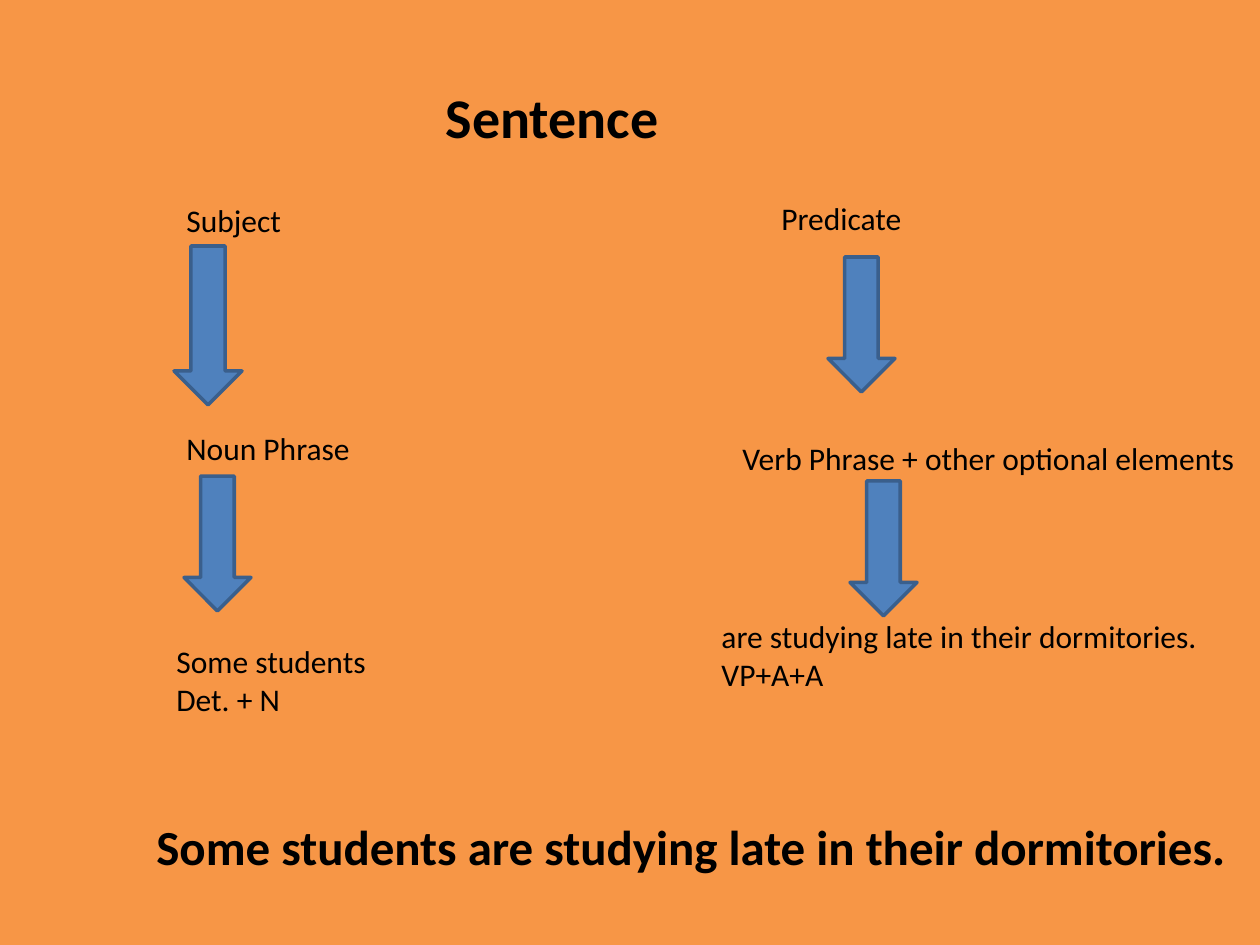
"""Build a slide that splits a sentence into subject and predicate."""
from pptx import Presentation
from pptx.dml.color import RGBColor
from pptx.enum.shapes import MSO_SHAPE
from pptx.enum.text import MSO_ANCHOR, MSO_AUTO_SIZE, PP_ALIGN
from pptx.util import Pt

COLORS = {"background": "F79646", "arrow": "4F81BD", "outline": "3A5F8C", "text": "000000"}
FONT = "Calibri"
EMU_PER_PX = 914400 / 126


def px(length):
    return round(length * EMU_PER_PX)


def color(name):
    return RGBColor.from_string(COLORS[name])


class SentenceSlide:
    def __init__(self, presentation):
        self.slide = presentation.slides.add_slide(presentation.slide_layouts[5])
        fill = self.slide.background.fill
        fill.solid()
        fill.fore_color.rgb = color("background")

    def set_text(self, box, lines, size, bold, wrap=True):
        frame = box.text_frame
        frame.text = "\n".join(lines)
        frame.word_wrap = wrap
        frame.auto_size = MSO_AUTO_SIZE.SHAPE_TO_FIT_TEXT
        frame.vertical_anchor = MSO_ANCHOR.TOP
        for paragraph in frame.paragraphs:
            paragraph.alignment = PP_ALIGN.LEFT
            paragraph.font.name = FONT
            paragraph.font.size = Pt(size)
            paragraph.font.bold = bold
            paragraph.font.color.rgb = color("text")

    def title(self, left, top, width, height, text):
        heading = self.slide.shapes.title
        heading.left, heading.top = px(left), px(top)
        heading.width, heading.height = px(width), px(height)
        self.set_text(heading, [text], 32, True)

    def label(self, left, top, width, height, *lines, size=18, bold=False, wrap=True):
        box = self.slide.shapes.add_textbox(px(left), px(top), px(width), px(height))
        self.set_text(box, lines, size, bold, wrap)

    def arrow(self, left, top, width=67, height=135):
        arrow = self.slide.shapes.add_shape(
            MSO_SHAPE.DOWN_ARROW, px(left), px(top), px(width), px(height))
        arrow.shadow.inherit = False
        arrow.fill.solid()
        arrow.fill.fore_color.rgb = color("arrow")
        arrow.line.color.rgb = color("outline")
        arrow.line.width = Pt(2)


def main():
    presentation = Presentation()
    presentation.slide_width, presentation.slide_height = px(1260), px(945)
    page = SentenceSlide(presentation)
    page.title(433, 76, 296, 81, "Sentence")

    page.arrow(174, 246, 68, 159)
    page.label(174, 195, 260, 50, "Subject")
    page.label(174, 423, 260, 50, "Noun Phrase")
    page.arrow(184, 476)
    page.label(164, 636, 377, 89, "Some students", "Det. + N")

    page.label(769, 193, 387, 50, "Predicate")
    page.arrow(828, 257)
    page.label(730, 433, 656, 50, "Verb Phrase + other optional elements")
    page.arrow(850, 481)
    page.label(709, 611, 672, 89, "are studying late in their dormitories.", "VP+A+A")

    page.label(144, 810, 1108, 72, "Some students are studying late in their dormitories.",
               size=28, bold=True, wrap=False)
    presentation.save("out.pptx")


if __name__ == "__main__":
    main()
